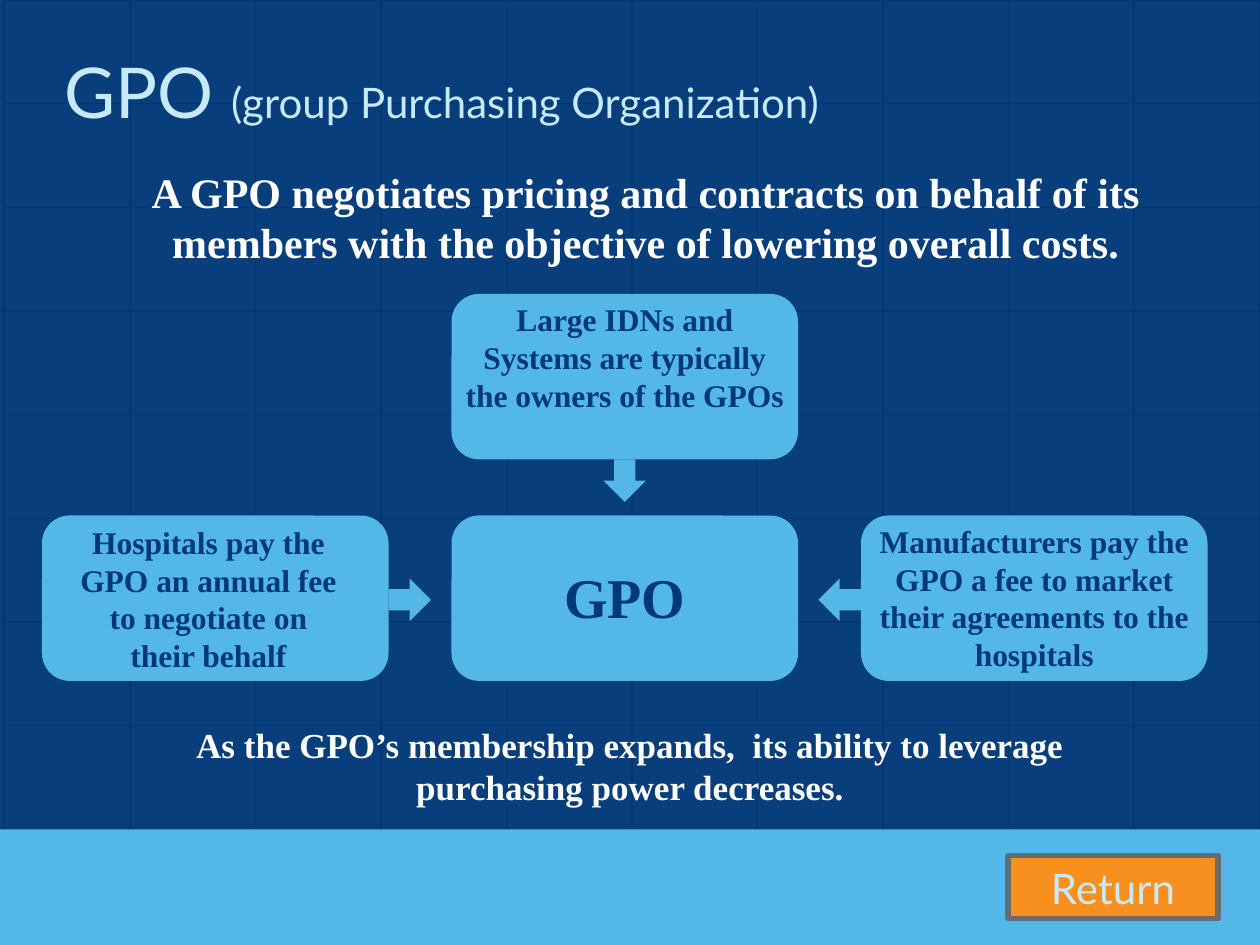
"""Build the GPO slide: a flow of three parties into a purchasing organization."""
from dataclasses import dataclass

from lxml.etree import SubElement
from pptx import Presentation
from pptx.dml.color import RGBColor
from pptx.enum.shapes import MSO_SHAPE as Preset
from pptx.enum.text import MSO_ANCHOR as Anchor, MSO_AUTO_SIZE as AutoSize, PP_ALIGN as Align
from pptx.oxml.ns import qn
from pptx.util import Inches, Pt

COLORS = {"navy": "003878", "sky": "53B7E8", "pale": "C7EAFB", "white": "FFFFFF",
          "orange": "F7901E", "gray": "696B73", "black": "000000"}
WIDTH, HEIGHT = Inches(10), Inches(7.5)
COLUMNS, ROWS = 120, 90
SERIF, SANS = "Times New Roman", "Lato"
LEFT, MIDDLE, RIGHT = 4, 43, 82
UPPER, LOWER = 28, 49.1
BOX_WIDTH, BOX_HEIGHT = 33, 15.75
ARROW = 4.05


@dataclass(frozen=True)
class Area:
    """A place on the slide in grid columns and rows."""
    column: float
    row: float
    width: float
    height: float

    def lengths(self) -> tuple[int, int, int, int]:
        """Return left, top, width and height as slide lengths."""
        return (int(WIDTH * self.column / COLUMNS), int(HEIGHT * self.row / ROWS),
                int(WIDTH * self.width / COLUMNS), int(HEIGHT * self.height / ROWS))


@dataclass(frozen=True)
class Block:
    """A filled preset shape."""
    preset: Preset
    area: Area
    color: str = "sky"


@dataclass(frozen=True)
class Caption:
    """A centred bold text."""
    text: str
    area: Area
    size: int
    color: str = "navy"


def box(column: float, row: float) -> Block:
    """Describe one rounded party box."""
    return Block(Preset.ROUNDED_RECTANGLE, Area(column, row, BOX_WIDTH, BOX_HEIGHT))


def arrow(preset: Preset, column: float, row: float) -> Block:
    """Describe one small block arrow."""
    return Block(preset, Area(column, row, ARROW, ARROW))


BOXES = [box(MIDDLE, UPPER), box(MIDDLE, LOWER), box(LEFT, LOWER), box(RIGHT, LOWER)]
ARROWS = [
    arrow(Preset.RIGHT_ARROW, LEFT + BOX_WIDTH, 55.1),
    arrow(Preset.LEFT_ARROW, RIGHT - ARROW, 55.1),
    arrow(Preset.DOWN_ARROW, MIDDLE + (BOX_WIDTH - ARROW) / 2, UPPER + BOX_HEIGHT),
]
CAPTIONS = [
    Caption("A GPO negotiates pricing and contracts on behalf of its members with the "
            "objective of lowering overall costs.", Area(7, 15.25, 109, 10.9), 24, "white"),
    Caption("Hospitals pay the GPO an annual fee to negotiate on their behalf",
            Area(6, 49.2, 27.7, BOX_HEIGHT), 18),
    Caption("Manufacturers pay the GPO a fee to market their agreements to the hospitals",
            BOXES[3].area, 18),
    Caption("GPO", Area(45.25, 53, 28.5, 7.7), 32),
    Caption("Large IDNs and Systems are typically the owners of the GPOs", BOXES[0].area, 18),
    Caption("As the GPO’s membership expands,  its ability to leverage purchasing power "
            "decreases.", Area(11, 68.3, 98, 9.2), 20, "white"),
]


def rgb(name: str) -> RGBColor:
    """Look up a named colour."""
    return RGBColor.from_string(COLORS[name])


def style(paragraph, font_name: str, color: str, align: Align) -> None:
    """Set the font, colour and alignment of a paragraph."""
    paragraph.alignment = align
    paragraph.font.name = font_name
    paragraph.font.color.rgb = rgb(color)


def draw_block(slide, block: Block):
    """Draw a filled shape without outline or shadow."""
    shape = slide.shapes.add_shape(block.preset, *block.area.lengths())
    shape.shadow.inherit = False
    shape.fill.solid()
    shape.fill.fore_color.rgb = rgb(block.color)
    shape.line.fill.background()
    return shape


def draw_caption(slide, caption: Caption) -> None:
    """Draw a wrapped text box."""
    frame = slide.shapes.add_textbox(*caption.area.lengths()).text_frame
    frame.word_wrap = True
    paragraph = frame.paragraphs[0]
    paragraph.text = caption.text
    style(paragraph, SERIF, caption.color, Align.CENTER)
    paragraph.font.size = Pt(caption.size)
    paragraph.font.bold = True


def draw_grid(slide, area: Area, rows: int, columns: int) -> None:
    """Draw an empty table with thin borders."""
    table = slide.shapes.add_table(rows, columns, *area.lengths()).table
    table.first_row = table.horz_banding = False
    for cell in table.iter_cells():
        properties = cell._tc.get_or_add_tcPr()
        for side in ("a:lnL", "a:lnR", "a:lnT", "a:lnB"):
            border = SubElement(properties, qn(side), w=str(Pt(1)))
            fill = SubElement(border, qn("a:solidFill"))
            SubElement(fill, qn("a:srgbClr"), val=COLORS["black"])
        cell.fill.background()


def draw_veil(slide, opacity: int) -> None:
    """Cover the grid with a nearly opaque navy sheet."""
    veil = draw_block(slide, Block(Preset.RECTANGLE, Area(0, 0, COLUMNS, ROWS), "navy"))
    color = veil.element.spPr.find(f"{qn('a:solidFill')}/{qn('a:srgbClr')}")
    SubElement(color, qn("a:alpha"), val=str(opacity * 1000))


def draw_title(slide, area: Area) -> None:
    """Place the two-size title in its placeholder, above the background."""
    title = slide.shapes.title
    title.left, title.top, title.width, title.height = area.lengths()
    frame = title.text_frame
    frame.auto_size = AutoSize.NONE
    frame.vertical_anchor = Anchor.TOP
    paragraph = frame.paragraphs[0]
    style(paragraph, SANS, "pale", Align.LEFT)
    for text, size in (("GPO ", 40), ("(group Purchasing Organization)", 24)):
        run = paragraph.add_run()
        run.text = text
        run.font.size = Pt(size)
    title.element.getparent().append(title.element)


def draw_button(slide, text: str, area: Area) -> None:
    """Draw the outlined button in the footer."""
    button = draw_block(slide, Block(Preset.RECTANGLE, area, "orange"))
    button.line.color.rgb = rgb("gray")
    button.line.width = Pt(3)
    paragraph = button.text_frame.paragraphs[0]
    paragraph.text = text
    style(paragraph, SANS, "pale", Align.CENTER)
    paragraph.font.size = Pt(24)


def main() -> None:
    """Assemble the slide from back to front and save it."""
    presentation = Presentation()
    presentation.slide_width, presentation.slide_height = WIDTH, HEIGHT
    slide = presentation.slides.add_slide(presentation.slide_layouts[5])
    draw_grid(slide, Area(0.4, 0, 119.6, 79), 8, 10)
    draw_veil(slide, 97)
    for block in BOXES:
        draw_block(slide, block)
    draw_title(slide, Area(4.9, 4, 113, 9.25))
    draw_block(slide, Block(Preset.RECTANGLE, Area(-0.25, 79, 120.25, 11)))
    draw_button(slide, "Return", Area(96, 81.5, 20, 6))
    for caption in CAPTIONS:
        draw_caption(slide, caption)
    for block in ARROWS:
        draw_block(slide, block)
    presentation.save("out.pptx")


if __name__ == "__main__":
    main()
